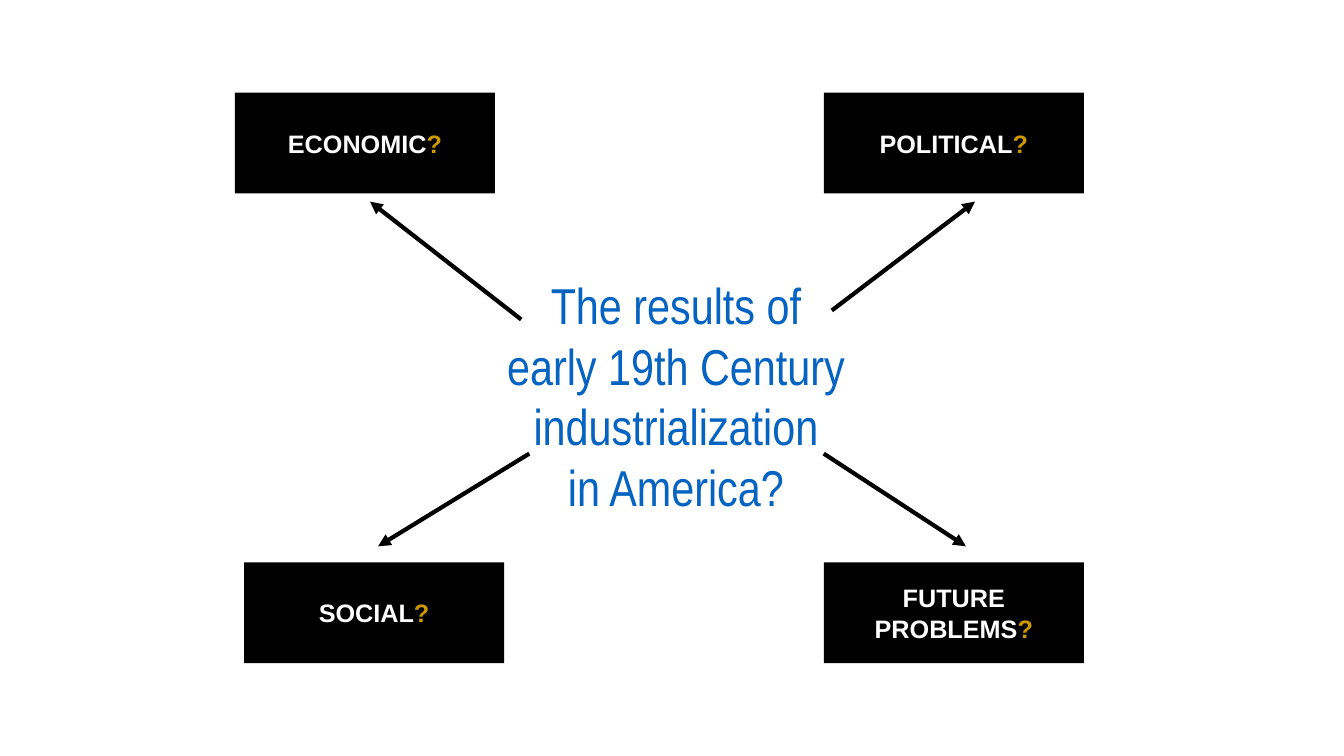
import pptx
import pptx.dml.color
import pptx.enum.shapes
import pptx.enum.text
import pptx.oxml
import pptx.oxml.ns
import pptx.util
from dataclasses import dataclass

Inches = pptx.util.Inches
Pt = pptx.util.Pt
PP_ALIGN = pptx.enum.text.PP_ALIGN
MSO_ANCHOR = pptx.enum.text.MSO_ANCHOR


@dataclass(frozen=True)
class Theme:
    background: str = "FFFFFF"
    ink: str = "000000"
    question: str = "0563C1"
    label: str = "FFFFFF"
    mark: str = "CC9900"
    question_font: str = "Arial Narrow"
    label_font: str = "Arial"
    question_size: int = 36
    label_size: int = 18
    outline_width: float = 1.5
    arrow_width: int = 3


THEME = Theme()
BOX_WIDTH, BOX_HEIGHT = 2.58, 1

QUESTION = ["The results of", "early 19th Century", "industrialization", "in America?"]
# Label lines, left, top
TOPICS = [
    (["ECONOMIC"], 2.33, 0.92),
    (["SOCIAL"], 2.42, 5.58),
    (["POLITICAL"], 8.17, 0.92),
    (["FUTURE", "PROBLEMS"], 8.17, 5.58),
]
# Start and end of each arrow, pointing outwards
ARROWS = [
    ((5.25, 4.5), (3.75, 5.42)),
    ((8.25, 3.08), (9.67, 2)),
    ((5.17, 3.17), (3.67, 2)),
    ((8.17, 4.5), (9.58, 5.42)),
]


def rgb(value):
    return pptx.dml.color.RGBColor.from_string(value)


def xml(tag, content=""):
    ns = pptx.oxml.ns.nsdecls("a")
    return pptx.oxml.parse_xml(f"<a:{tag} {ns}>{content}</a:{tag.split()[0]}>")


def add_run(p, text, font, size, color, bold=False):
    r = p.add_run()
    r.text = text
    r.font.name = font
    r.font.size = Pt(size)
    r.font.bold = bold
    r.font.color.rgb = rgb(color)
    return r


def outline_run(r):
    width = int(Pt(THEME.outline_width))
    fill = f'<a:solidFill><a:srgbClr val="{THEME.ink}"/></a:solidFill>'
    r.font._element.insert(0, xml(f'ln w="{width}"', fill))


def set_question(slide):
    # Wide enough for the longest line, which must not wrap
    sp = slide.shapes.title
    sp.left, sp.top = Inches(4.88), Inches(2.67)
    sp.width, sp.height = Inches(3.65), Inches(2.33)
    tf = sp.text_frame
    tf.word_wrap = False
    tf.auto_size = pptx.enum.text.MSO_AUTO_SIZE.NONE
    tf.vertical_anchor = MSO_ANCHOR.TOP
    for i, line in enumerate(QUESTION):
        p = tf.add_paragraph() if i else tf.paragraphs[0]
        p.alignment = PP_ALIGN.CENTER
        outline_run(add_run(p, line, THEME.question_font, THEME.question_size,
                            THEME.question))


def add_topic(slide, lines, left, top):
    sp = slide.shapes.add_shape(
        pptx.enum.shapes.MSO_SHAPE.RECTANGLE,
        Inches(left), Inches(top), Inches(BOX_WIDTH), Inches(BOX_HEIGHT))
    sp.shadow.inherit = False
    sp.fill.solid()
    sp.fill.fore_color.rgb = rgb(THEME.ink)
    sp.line.fill.background()
    tf = sp.text_frame
    tf.word_wrap = False
    tf.vertical_anchor = MSO_ANCHOR.MIDDLE
    p = tf.paragraphs[0]
    p.alignment = PP_ALIGN.CENTER
    style = (THEME.label_font, THEME.label_size)
    for i, line in enumerate(lines):
        if i:
            p.add_line_break()
        add_run(p, line, *style, THEME.label, bold=True)
    add_run(p, "?", *style, THEME.mark, bold=True)


def add_arrow(slide, start, end):
    cxn = slide.shapes.add_connector(
        pptx.enum.shapes.MSO_CONNECTOR.STRAIGHT,
        *(Inches(v) for v in start + end))
    cxn.line.color.rgb = rgb(THEME.ink)
    cxn.line.width = Pt(THEME.arrow_width)
    cxn.line._get_or_add_ln().append(xml('tailEnd type="triangle"'))
    cxn._element.spPr.append(xml("effectLst"))


def main():
    prs = pptx.Presentation()
    prs.slide_width, prs.slide_height = Inches(13.33), Inches(7.5)
    slide = prs.slides.add_slide(prs.slide_layouts.get_by_name("Title Only"))
    slide.background.fill.solid()
    slide.background.fill.fore_color.rgb = rgb(THEME.background)

    # Central question
    set_question(slide)

    # Topic boxes in the corners
    for lines, left, top in TOPICS:
        add_topic(slide, lines, left, top)

    # Arrows from the question to the topics
    for start, end in ARROWS:
        add_arrow(slide, start, end)

    prs.save("out.pptx")


if __name__ == "__main__":
    main()
